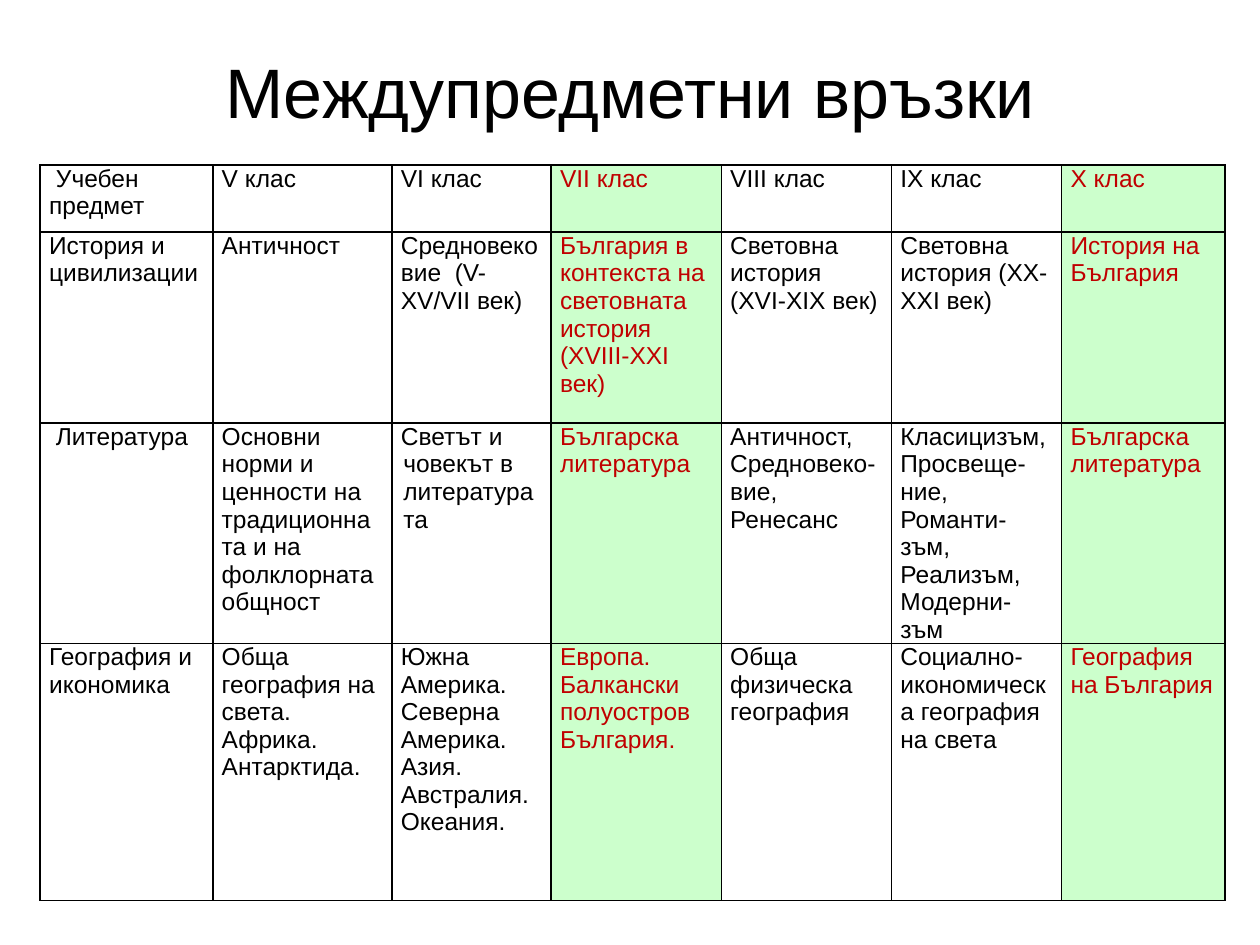
from dataclasses import dataclass

from lxml.etree import SubElement
from pptx import Presentation
from pptx.dml.color import RGBColor
from pptx.enum.text import MSO_ANCHOR, PP_ALIGN
from pptx.oxml.ns import qn
from pptx.util import Cm, Pt


@dataclass(frozen=True)
class Theme:
    font: str = "Arial"
    title_size: int = 40
    cell_size: int = 14
    border_width: int = 1
    ink: str = "000000"
    accent: str = "C00000"
    highlight: str = "CCFFCC"


THEME = Theme()
HEADING = "Междупредметни връзки"
SUBJECTS = [
    [" Учебен предмет", "V клас", "VI клас", "VII клас", "VIII клас", "IХ клас", "Х клас"],
    ["История и цивилизации", "Античност", "Средновековие  (V-ХV/VII век)",
     "България в контекста на световната история (ХVIII-ХХI век)",
     "Световна история (ХVI-ХIХ век)", "Световна история (ХХ-ХХI век)",
     "История на България"],
    [" Литература",
     "Основни норми и ценности на традиционна\nта и на фолклорната общност",
     "Светът и човекът в литературата", "Българска литература",
     "Античност, Средновеко-вие, Ренесанс",
     "Класицизъм,Просвеще-ние, Романти-зъм, Реализъм, Модерни-зъм",
     "Българска литература"],
    ["География и икономика", "Обща география на света.\nАфрика. Антарктида.",
     "Южна Америка. Северна Америка. Азия. Австралия. Океания.",
     "Европа.\nБалкански полуостров\nБългария.", "Обща физическа география",
     "Социално-икономическа география на света", "География на България"],
]
BULGARIAN_GRADES = (3, 6)
HANGING_CELL = (2, 2)
COLUMN_WIDTHS = [3.48, 3.61, 3.21, 3.43, 3.43, 3.43, 3.29]
ROW_HEIGHTS = [1.35, 3.85, 3.86, 5.18]


def style(paragraph, size, color):
    paragraph.font.name = THEME.font
    paragraph.font.size = Pt(size)
    paragraph.font.color.rgb = RGBColor.from_string(color)


def add_borders(cell):
    properties = cell._tc.get_or_add_tcPr()
    for side in ("lnL", "lnR", "lnT", "lnB"):
        border = SubElement(properties, qn(f"a:{side}"), w=str(Pt(THEME.border_width)))
        fill = SubElement(border, qn("a:solidFill"))
        SubElement(fill, qn("a:srgbClr"), val=THEME.ink)


def fill_cell(cell, words, highlighted):
    cell.margin_left = cell.margin_right = Cm(0.18)
    cell.margin_top = cell.margin_bottom = Cm(0)
    cell.vertical_anchor = MSO_ANCHOR.TOP
    add_borders(cell)
    if highlighted:
        cell.fill.solid()
        cell.fill.fore_color.rgb = RGBColor.from_string(THEME.highlight)
    else:
        cell.fill.background()
    cell.text = words
    for paragraph in cell.text_frame.paragraphs:
        style(paragraph, THEME.cell_size, THEME.accent if highlighted else THEME.ink)


def add_heading(slide):
    heading = slide.shapes.title
    heading.left, heading.top = Cm(1.27), Cm(0.76)
    heading.width, heading.height = Cm(22.86), Cm(2.11)
    heading.text_frame.text = HEADING
    heading.text_frame.vertical_anchor = MSO_ANCHOR.MIDDLE
    paragraph = heading.text_frame.paragraphs[0]
    paragraph.alignment = PP_ALIGN.CENTER
    style(paragraph, THEME.title_size, THEME.ink)


def add_subjects(slide):
    subjects = slide.shapes.add_table(
        len(SUBJECTS), len(COLUMN_WIDTHS), Cm(0.81), Cm(3.33),
        Cm(sum(COLUMN_WIDTHS)), Cm(sum(ROW_HEIGHTS))).table
    subjects.first_row = subjects.horz_banding = False
    for column, width in zip(subjects.columns, COLUMN_WIDTHS):
        column.width = Cm(width)
    for row, height in zip(subjects.rows, ROW_HEIGHTS):
        row.height = Cm(height)
    for r, subject in enumerate(SUBJECTS):
        for c, words in enumerate(subject):
            fill_cell(subjects.cell(r, c), words, c in BULGARIAN_GRADES)
    for paragraph in subjects.cell(*HANGING_CELL).text_frame.paragraphs:
        indent = paragraph._p.get_or_add_pPr()
        indent.set("marL", str(Cm(0.05)))
        indent.set("indent", str(-Cm(0.05)))


def main():
    deck = Presentation()
    deck.slide_width, deck.slide_height = Cm(25.4), Cm(19.05)
    slide = deck.slides.add_slide(deck.slide_layouts[5])
    add_heading(slide)
    add_subjects(slide)
    deck.save("out.pptx")


if __name__ == "__main__":
    main()
